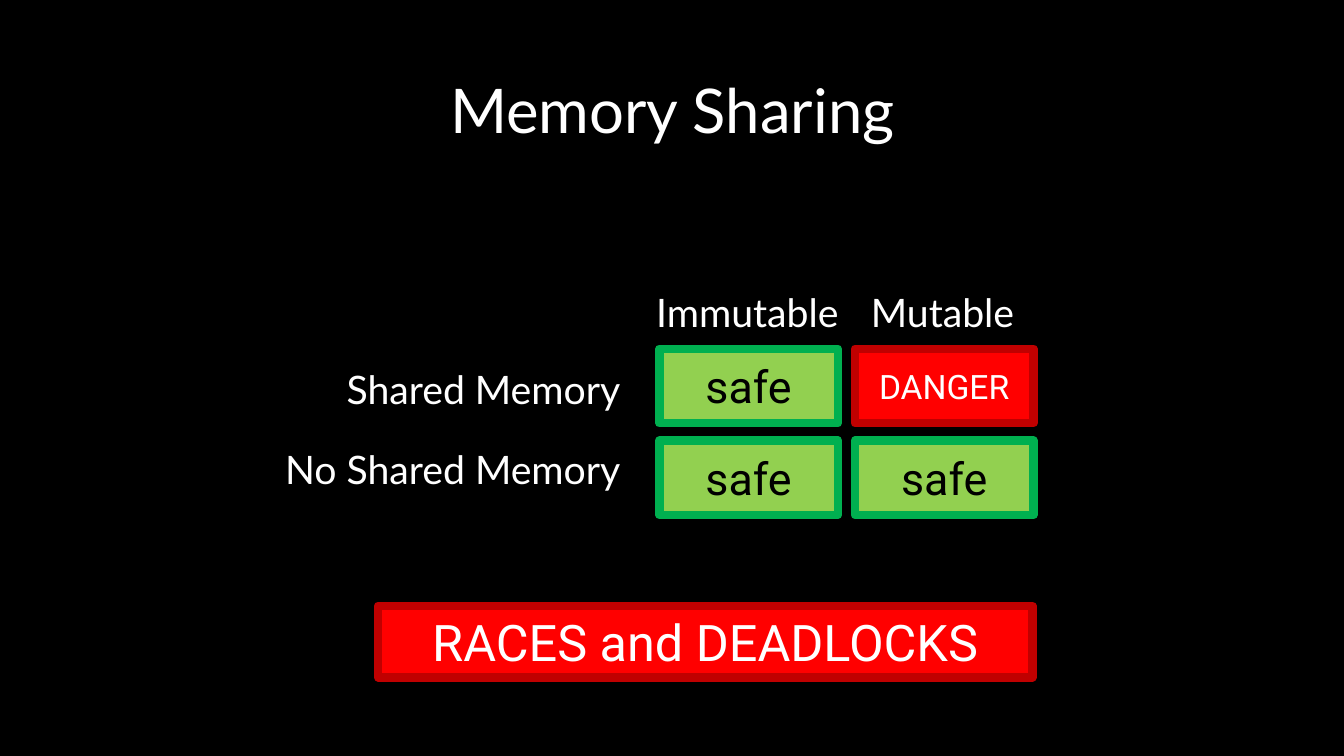
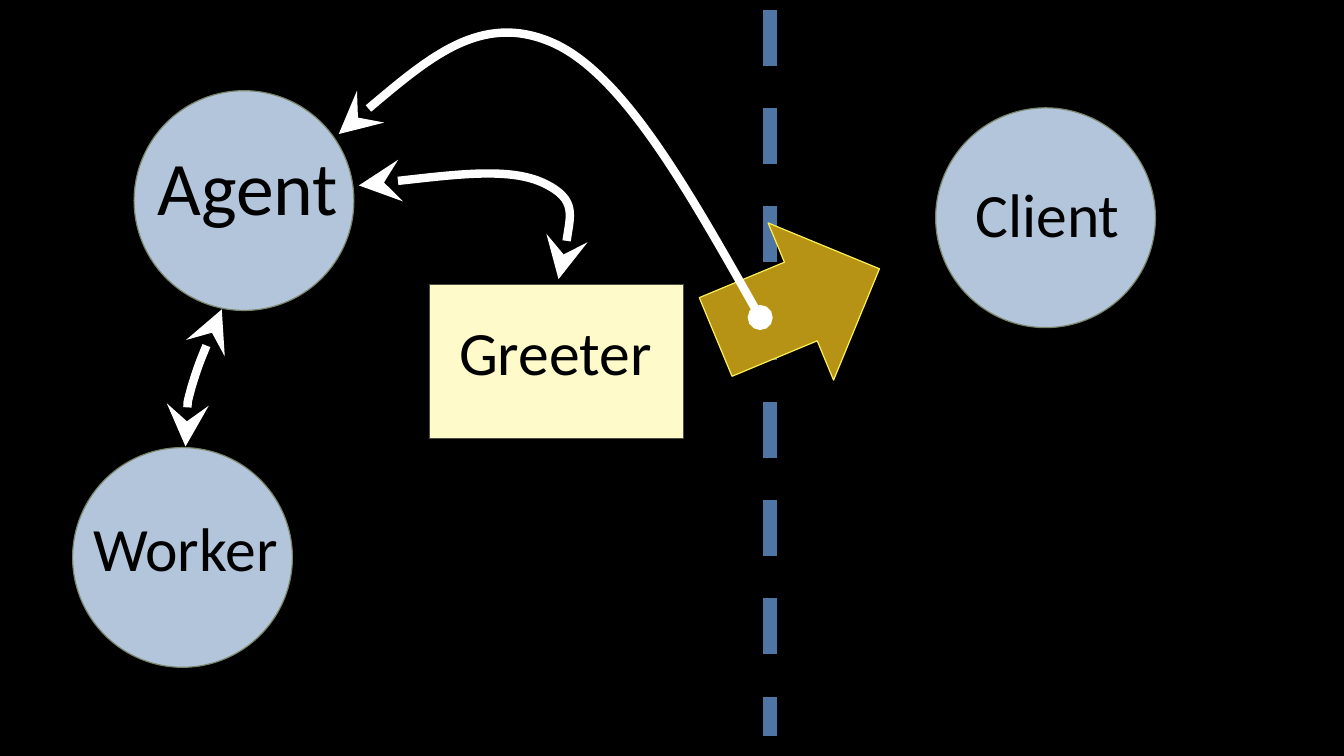
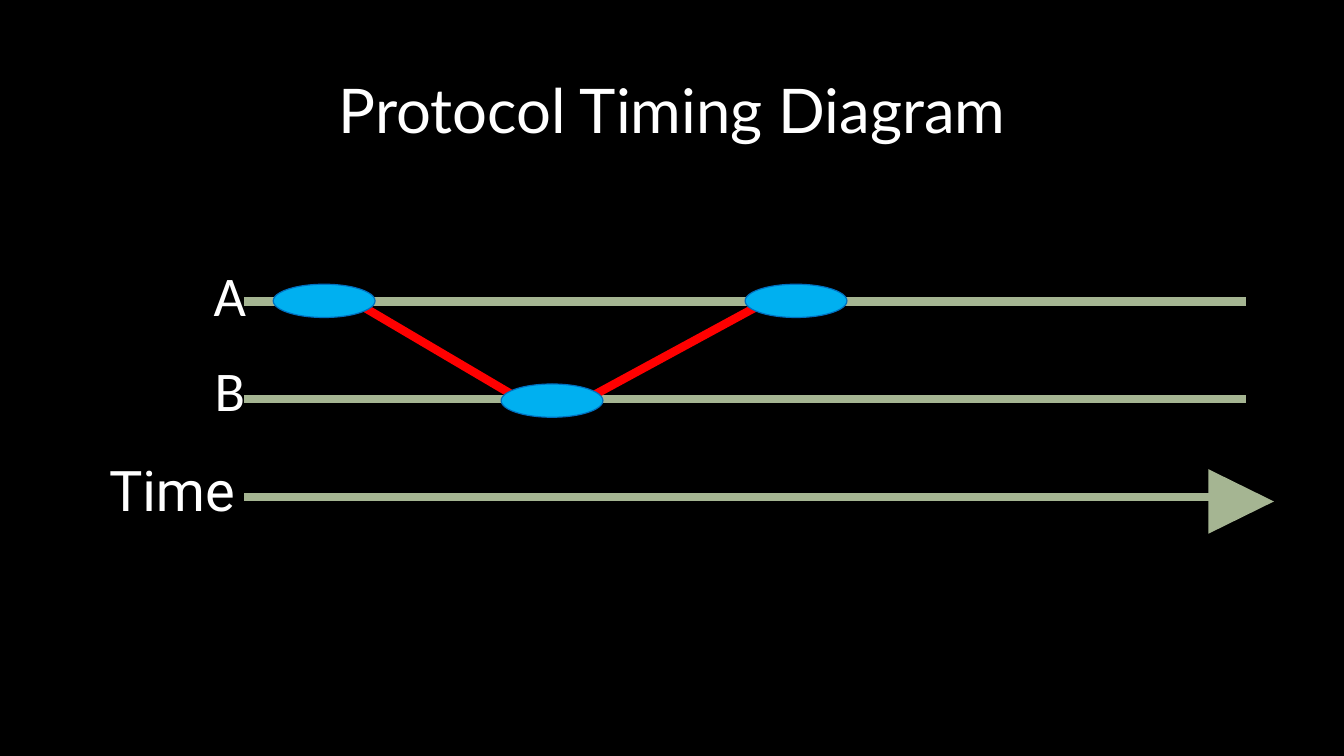
from dataclasses import dataclass
from typing import Optional

from lxml.etree import SubElement
from pptx import Presentation
from pptx.dml.color import RGBColor
from pptx.enum.dml import MSO_LINE
from pptx.enum.shapes import MSO_CONNECTOR, MSO_SHAPE
from pptx.enum.text import MSO_ANCHOR, PP_ALIGN
from pptx.oxml.ns import qn
from pptx.util import Inches, Pt

BLACK = RGBColor(0x00, 0x00, 0x00)
WHITE = RGBColor(0xFF, 0xFF, 0xFF)
RED = RGBColor(0xFF, 0x00, 0x00)
DARK_RED = RGBColor(0xC0, 0x00, 0x00)
LIGHT_GREEN = RGBColor(0x92, 0xD0, 0x50)
GREEN = RGBColor(0x00, 0xB0, 0x50)
PALE_BLUE = RGBColor(0xB3, 0xC5, 0xDA)
STEEL_BLUE = RGBColor(0x4E, 0x75, 0xA3)
OLIVE = RGBColor(0x7A, 0x86, 0x6C)
DARK_OLIVE = RGBColor(0x48, 0x4F, 0x40)
CREAM = RGBColor(0xFE, 0xFA, 0xC9)
GOLD = RGBColor(0xB7, 0x93, 0x15)
YELLOW = RGBColor(0xFC, 0xF0, 0x59)
SAGE = RGBColor(0xA5, 0xB5, 0x92)
SKY = RGBColor(0x00, 0xB0, 0xF0)
OCEAN = RGBColor(0x00, 0x70, 0xC0)

THICK = 6
THIN = 0.85

Point = tuple[float, float]


@dataclass(frozen=True)
class Frame:
    left: float
    top: float
    width: float
    height: float

    def lengths(self) -> list[int]:
        return [Inches(side) for side in (self.left, self.top, self.width, self.height)]


@dataclass(frozen=True)
class TextStyle:
    font: str
    size: float
    color: RGBColor = WHITE
    align: PP_ALIGN = PP_ALIGN.CENTER
    anchor: MSO_ANCHOR = MSO_ANCHOR.MIDDLE
    spacing: Optional[float] = None


@dataclass(frozen=True)
class Look:
    fill: RGBColor
    line: Optional[RGBColor] = None
    width: float = THIN


@dataclass(frozen=True)
class Actor:
    name: str
    circle: Point
    label: Frame
    size: float = 44


@dataclass(frozen=True)
class Curve:
    start: Point
    segments: tuple[tuple[Point, Point, Point], ...]
    head: str = "stealth"
    tail: str = "stealth"


TITLE_FRAME = Frame(0.92, 0.4, 11.5, 1.45)
TITLE = TextStyle("Lato", 44, spacing=0.9)
SAFE_LOOK = Look(LIGHT_GREEN, GREEN, THICK)
DANGER_LOOK = Look(RED, DARK_RED, THICK)
SAFE_TEXT = TextStyle("Roboto", 32, BLACK)
ROW_LABEL = TextStyle("Lato", 28, align=PP_ALIGN.RIGHT, anchor=MSO_ANCHOR.TOP)
COLUMN_LABEL = TextStyle("Lato", 28, align=PP_ALIGN.LEFT, anchor=MSO_ANCHOR.TOP)
LANE_LABEL = TextStyle("Calibri", 40, anchor=MSO_ANCHOR.TOP)
ARROW_SIZES = {"stealth": "lg", "oval": "med"}

ACTORS = (
    Actor("Agent", (1.33, 0.9), Frame(0.91, 1.33, 3.1, 1.01), 54),
    Actor("Client", (9.28, 1.07), Frame(8.84, 1.69, 3.1, 0.84)),
    Actor("Worker", (0.72, 4.44), Frame(0.29, 5.01, 3.1, 0.84)),
)
WORKER_CURVE = Curve((2.2, 3.07), (
    ((2.08, 3.34), (1.97, 3.61), (1.9, 3.84)),
    ((1.84, 4.06), (1.84, 4.25), (1.84, 4.43)),
))
GREETER_CURVE = Curve((3.56, 1.84), (
    ((4.31, 1.75), (5.07, 1.66), (5.4, 1.82)),
    ((5.73, 1.98), (5.64, 2.37), (5.54, 2.77)),
))
CLIENT_CURVE = Curve((7.54, 3.15), (
    ((6.85, 1.93), (6.17, 0.72), (5.47, 0.42)),
    ((4.77, 0.12), (4.06, 0.72), (3.36, 1.33)),
), head="oval")


def write(shape, text: str, style: TextStyle) -> None:
    text_frame = shape.text_frame
    text_frame.word_wrap = True
    text_frame.vertical_anchor = style.anchor
    para = text_frame.paragraphs[0]
    para.alignment = style.align
    if style.spacing:
        para.line_spacing = style.spacing
    span = para.add_run()
    span.text = text
    span.font.name = style.font
    span.font.size = Pt(style.size)
    span.font.color.rgb = style.color


def add_text(shapes, frame: Frame, text: str, style: TextStyle) -> None:
    write(shapes.add_textbox(*frame.lengths()), text, style)


def add_figure(shapes, kind: MSO_SHAPE, frame: Frame, look: Look, rotation: float = 0):
    figure = shapes.add_shape(kind, *frame.lengths())
    figure.shadow.inherit = False
    figure.rotation = rotation
    figure.fill.solid()
    figure.fill.fore_color.rgb = look.fill
    if look.line is None:
        figure.line.fill.background()
    else:
        figure.line.color.rgb = look.line
        figure.line.width = Pt(look.width)
    return figure


def add_line(shapes, start: Point, end: Point, color: RGBColor, width: float = THICK,
             dash: Optional[MSO_LINE] = None) -> None:
    ends = [Inches(value) for value in (*start, *end)]
    line = shapes.add_connector(MSO_CONNECTOR.STRAIGHT, *ends)
    line.line.color.rgb = color
    line.line.width = Pt(width)
    if dash is not None:
        line.line.dash_style = dash
    SubElement(line._element.spPr, qn("a:effectLst"))


def bend(outline) -> None:
    straights = list(outline.iter(qn("a:lnTo")))
    track = straights[0].getparent()
    for first in range(0, len(straights), 3):
        cubic = SubElement(track, qn("a:cubicBezTo"))
        for straight in straights[first:first + 3]:
            cubic.append(straight[0])
            track.remove(straight)


def add_curve(shapes, curve: Curve) -> None:
    builder = shapes.build_freeform(*(Inches(value) for value in curve.start))
    builder.add_line_segments(
        [(Inches(x), Inches(y)) for segment in curve.segments for x, y in segment],
        close=False)
    arrow = builder.convert_to_shape()
    bend(arrow._element)
    arrow.shadow.inherit = False
    arrow.fill.background()
    arrow.line.color.rgb = WHITE
    arrow.line.width = Pt(THICK)
    stroke = arrow.line._get_or_add_ln()
    for end, kind in (("a:headEnd", curve.head), ("a:tailEnd", curve.tail)):
        size = ARROW_SIZES[kind]
        SubElement(stroke, qn(end), type=kind, w=size, len=size)


def add_page(deck, title: Optional[str] = None):
    page = deck.slides.add_slide(deck.slide_layouts[6])
    if title:
        add_text(page.shapes, TITLE_FRAME, title, TITLE)
    return page.shapes


def build_memory_sharing(deck) -> None:
    shapes = add_page(deck, "Memory Sharing")
    for row, top in enumerate((3.46, 4.37)):
        for column, left in enumerate((6.54, 8.48)):
            danger = (row, column) == (0, 1)
            cell = add_figure(shapes, MSO_SHAPE.RECTANGLE, Frame(left, top, 1.77, 0.74),
                              DANGER_LOOK if danger else SAFE_LOOK)
            if danger:
                write(cell, "DANGER", TextStyle("Roboto", 24))
            else:
                write(cell, "safe", SAFE_TEXT)
    add_text(shapes, Frame(3.05, 3.58, 3.2, 0.57), "Shared Memory", ROW_LABEL)
    add_text(shapes, Frame(2.44, 4.37, 3.81, 0.57), "No Shared Memory", ROW_LABEL)
    add_text(shapes, Frame(6.41, 2.81, 2.22, 0.57), "Immutable", COLUMN_LABEL)
    add_text(shapes, Frame(8.54, 2.81, 1.76, 0.57), "Mutable", COLUMN_LABEL)
    banner = add_figure(shapes, MSO_SHAPE.RECTANGLE, Frame(3.75, 6.01, 6.49, 0.71),
                        DANGER_LOOK)
    write(banner, "RACES and DEADLOCKS",
          TextStyle("Roboto", 36, anchor=MSO_ANCHOR.TOP))


def build_agents(deck) -> None:
    shapes = add_page(deck)
    for actor in ACTORS:
        add_figure(shapes, MSO_SHAPE.OVAL, Frame(*actor.circle, 2.18, 2.18),
                   Look(PALE_BLUE, OLIVE))
        add_text(shapes, actor.label, actor.name, TextStyle("Calibri", actor.size, BLACK))
    add_line(shapes, (7.64, 0.1), (7.64, 7.3), STEEL_BLUE, 10, MSO_LINE.DASH)
    add_curve(shapes, WORKER_CURVE)
    add_curve(shapes, GREETER_CURVE)
    add_figure(shapes, MSO_SHAPE.LEFT_ARROW, Frame(7.03, 2.16, 1.76, 1.69),
               Look(GOLD, YELLOW), rotation=157.4)
    add_curve(shapes, CLIENT_CURVE)
    greeter = shapes.add_group_shape().shapes
    add_figure(greeter, MSO_SHAPE.RECTANGLE, Frame(4.26, 2.82, 2.52, 1.53),
               Look(CREAM, DARK_OLIVE))
    add_text(greeter, Frame(3.96, 3.06, 3.1, 0.84), "Greeter",
             TextStyle("Calibri", 44, BLACK))


def build_timing(deck) -> None:
    shapes = add_page(deck, "Protocol Timing Diagram")
    for lane in range(3):
        height = 2.99 + 0.97 * lane
        add_line(shapes, (2.42, height), (12.36, height), SAGE)
    add_line(shapes, (3.51, 2.99), (5.19, 3.98), RED)
    add_line(shapes, (7.64, 2.97), (5.65, 4.05), RED)
    for name, top in (("A", 2.54), ("B", 3.48)):
        add_text(shapes, Frame(1.98, top, 0.6, 0.77), name, LANE_LABEL)
    add_text(shapes, Frame(0.92, 4.47, 1.57, 0.77), "Time",
             TextStyle("Roboto", 40, anchor=MSO_ANCHOR.TOP))
    add_figure(shapes, MSO_SHAPE.ISOSCELES_TRIANGLE, Frame(11.99, 4.65, 0.64, 0.65),
               Look(SAGE), rotation=90)
    for left, top in ((2.71, 2.82), (4.97, 3.81), (7.39, 2.82)):
        add_figure(shapes, MSO_SHAPE.OVAL, Frame(left, top, 1.01, 0.33), Look(SKY, OCEAN))


def main() -> None:
    deck = Presentation()
    deck.slide_width = Inches(13.33)
    deck.slide_height = Inches(7.5)
    backdrop = deck.slide_master.background.fill
    backdrop.solid()
    backdrop.fore_color.rgb = BLACK
    build_memory_sharing(deck)
    build_agents(deck)
    build_timing(deck)
    deck.save("out.pptx")


if __name__ == "__main__":
    main()
